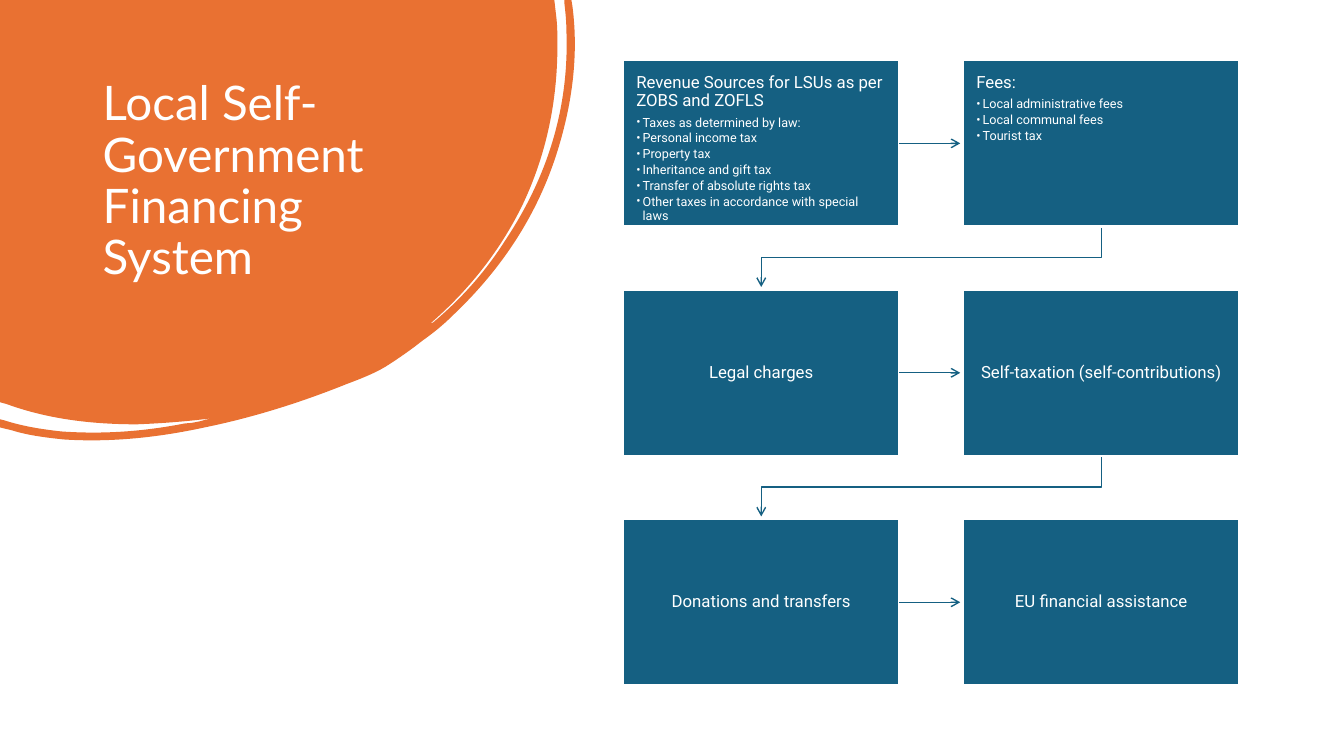
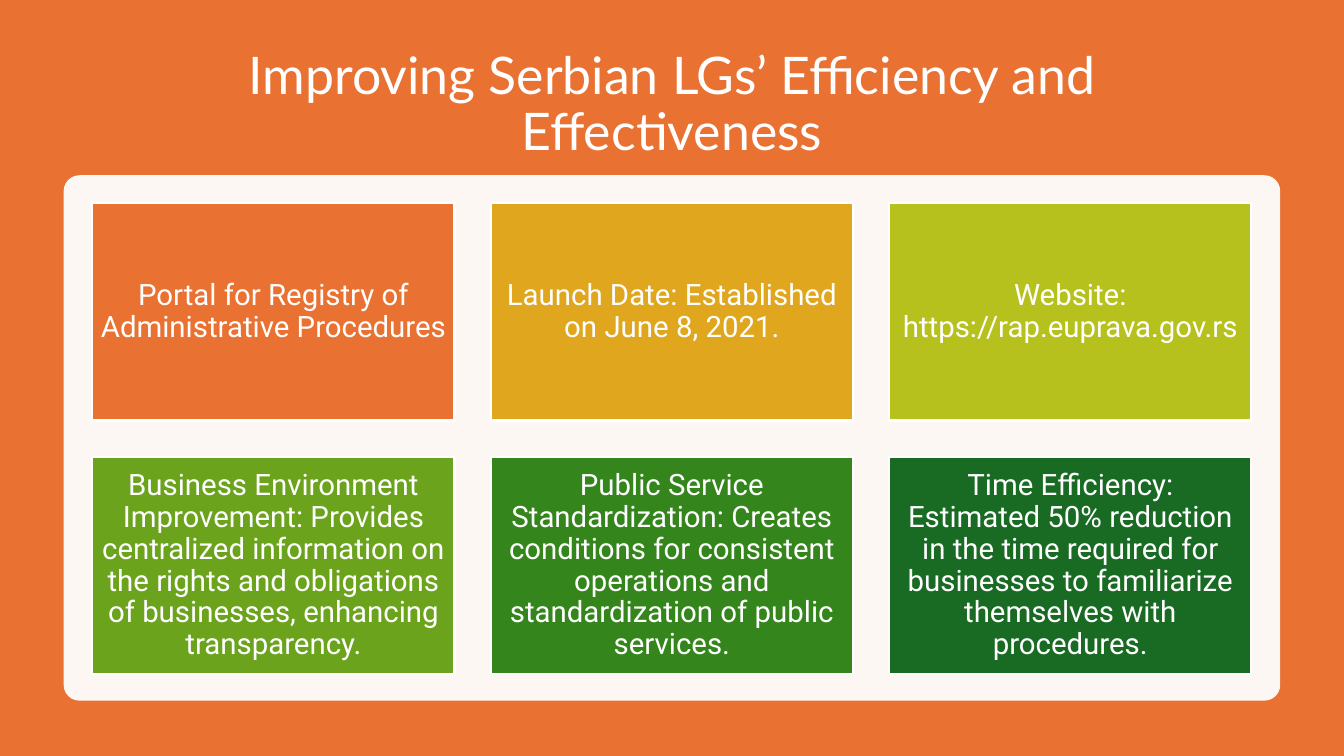
import pptx
import pptx.util
import pptx.dml.color
import pptx.enum.shapes
import pptx.enum.text
import pptx.oxml.ns
import lxml.etree

Pt = pptx.util.Pt
KIND = pptx.enum.shapes.MSO_SHAPE
LINK = pptx.enum.shapes.MSO_CONNECTOR
ALIGN = pptx.enum.text.PP_ALIGN
ANCHOR = pptx.enum.text.MSO_ANCHOR

HEX = {
    "white": "FFFFFF", "orange": "E97132", "blue": "156082",
    "gold": "E0A61D", "lime": "B7C11E", "leaf": "6BA31D",
    "green": "34861C", "forest": "196B24",
}
HEAD, BODY = "Lato", "Roboto"
GAP = 2  # space between an arrow's tip and the box it meets

# Outline of the orange blob: pairs are corners, sixes are cubic curves
BLOB = [
    (0, 0), (396, 0), (397.4, 12.2),
    (398.2, 18.7, 398.2, 25.9, 398.2, 32.4),
    (398.2, 72.7, 390.2, 110.9, 373, 146.9),
    (357.1, 179.3, 334.8, 207.4, 307.4, 231.1),
    (308.9, 231.1, 310.3, 229.7, 311, 229),
    (330.5, 212.4, 347, 193.7, 360.7, 172.1),
    (391, 126.7, 406.8, 77, 404.6, 21.6),
    (404.6, 15.1, 403.9, 8.6, 403.2, 2.2),
    (403.2, 0), (408.2, 0), (409, 5),
    (413.3, 38.9, 409, 73.4, 398.2, 108),
    (383.8, 154.1, 357.8, 193, 322.6, 226.1),
    (316.1, 232.6, 308.9, 238.3, 301.7, 243.4),
    (294.5, 249.1, 287.3, 254.2, 278.6, 259.9),
    (270, 265.7, 259.2, 270, 247.7, 274.3),
    (215.3, 287.3, 181.4, 298.1, 146.2, 305.3),
    (113, 312.5, 79.2, 316.1, 45.4, 313.9),
    (32.4, 312.5, 20.2, 311, 8.6, 307.4),
    (0, 305.3), (0, 299.5), (2.9, 300.2),
    (16.6, 304.6, 30.2, 306.7, 43.9, 308.2),
    (74.2, 310.3, 103, 308.2, 132.5, 302.4),
    (136.1, 302.4, 139, 301.7, 142.6, 301),
    (145.4, 300.2, 148.3, 299.5, 151.2, 298.8),
    (133.9, 301, 115.9, 302.4, 97.9, 303.1),
    (66.2, 303.1, 34.6, 299.5, 5, 288.7),
    (0, 287.3),
]

SOURCES = [
    ("Revenue Sources for LSUs as per ZOBS and ZOFLS", [
        "Taxes as determined by law:", "Personal income tax", "Property tax",
        "Inheritance and gift tax", "Transfer of absolute rights tax",
        "Other taxes in accordance with special laws"]),
    ("Fees:", ["Local administrative fees", "Local communal fees",
               "Tourist tax"]),
    ("Legal charges", []),
    ("Self-taxation (self-contributions)", []),
    ("Donations and transfers", []),
    ("EU financial assistance", []),
]

CARDS = [
    ("orange", "Portal for Registry of Administrative Procedures"),
    ("gold", "Launch Date: Established on June 8, 2021."),
    ("lime", "Website: https://rap.euprava.gov.rs"),
    ("leaf", "Business Environment Improvement: Provides centralized "
             "information on the rights and obligations of businesses, "
             "enhancing transparency."),
    ("green", "Public Service Standardization: Creates conditions for "
              "consistent operations and standardization of public services."),
    ("forest", "Time Efficiency: Estimated 50% reduction in the time required "
               "for businesses to familiarize themselves with procedures."),
]


# Shared helpers
def style(obj, form):
    for key, val in form.items():
        setattr(obj, key, val)


def color(name):
    return pptx.dml.color.RGBColor.from_string(HEX[name])


def paint(fill, name):
    fill.solid()
    fill.fore_color.rgb = color(name)


def sub(node, tag, **vals):
    return lxml.etree.SubElement(node, pptx.oxml.ns.qn(tag), vals)


def write(para, text, font, size, align, after=0):
    para.text = text
    style(para, {"alignment": align, "line_spacing": 0.9,
                 "space_before": Pt(0), "space_after": Pt(after)})
    style(para.font, {"name": font, "size": Pt(size)})
    para.font.color.rgb = color("white")


def bullet(para):
    props = para._p.get_or_add_pPr()
    style(para, {"level": 1})
    for key, val in {"marL": 4.5, "indent": -4.5}.items():
        props.set(key, str(Pt(val)))
    sub(props, "a:buFont", typeface=BODY)
    sub(props, "a:buChar", char="•")


def head(slide, box, text, size, align, anchor):
    title = slide.shapes.title
    style(title, dict(zip(("left", "top", "width", "height"), map(Pt, box))))
    style(title.text_frame, {
        "word_wrap": True, "vertical_anchor": anchor,
        "auto_size": pptx.enum.text.MSO_AUTO_SIZE.NONE})
    write(title.text_frame.paragraphs[0], text, HEAD, size, align)
    return title


def tile(slide, box, fill, pad, anchor):
    shape = slide.shapes.add_shape(KIND.RECTANGLE, *map(Pt, box))
    shape.shadow.inherit = False
    paint(shape.fill, fill)
    paint(shape.line.fill, "white")
    shape.line.width = Pt(1.5)
    side, edge = map(Pt, pad)
    style(shape.text_frame, {
        "word_wrap": True, "vertical_anchor": anchor,
        "margin_left": side, "margin_right": side,
        "margin_top": edge, "margin_bottom": edge})
    return shape


def cells(box, step, cols, count):
    """Boxes of a grid, row by row, from its first box and its pitch."""
    left, top, wide, high = box
    for num in range(count):
        row, col = divmod(num, cols)
        yield left + col * step[0], top + row * step[1], wide, high


# Orange blob
def blob(slide):
    spots = [(Pt(part[num]), Pt(part[num + 1]))
             for part in BLOB for num in range(0, len(part), 2)]
    pen = slide.shapes.build_freeform(*spots[0])
    pen.add_line_segments(spots[1:], close=True)
    shape = pen.convert_to_shape()
    shape.shadow.inherit = False
    paint(shape.fill, "orange")
    shape.line.fill.background()
    # Join the three points of each six into one curve
    legs = iter(list(shape.element.iter(pptx.oxml.ns.qn("a:lnTo"))))
    for part in BLOB[1:]:
        leg = next(legs)
        if len(part) == 6:
            leg.addprevious(curve := lxml.etree.Element(
                pptx.oxml.ns.qn("a:cubicBezTo")))
            for step in (leg, next(legs), next(legs)):
                curve.append(step[0])
                step.getparent().remove(step)
    return shape


# Arrows between the boxes
def arrow(slide, kind, *ends):
    link = slide.shapes.add_connector(kind, *ends)
    paint(link.line.fill, "blue")
    link.line.width = Pt(1)
    sub(link.line._get_or_add_ln(), "a:tailEnd", type="arrow")
    sub(link.element.spPr, "a:effectLst")
    return link


def across(slide, one, two):
    x, y = one.left + one.width, one.top + one.height // 2
    link = arrow(slide, LINK.STRAIGHT, x, y, two.left - Pt(GAP), y)
    link.begin_connect(one, 3)


def down(slide, one, two):
    x1, y1 = one.left + one.width // 2, one.top + one.height + Pt(GAP / 2)
    x2, y2 = two.left + two.width // 2, two.top - Pt(GAP)
    # A quarter turn makes the elbow leave downwards
    midx, midy = (x1 + x2) // 2, (y1 + y2) // 2
    dx, dy = (x1 - x2) // 2, (y2 - y1) // 2
    link = arrow(slide, LINK.ELBOW, midx - dy, midy - dx, midx + dy, midy + dx)
    link.element.spPr.find(pptx.oxml.ns.qn("a:xfrm")).set("rot", "5400000")


# Flow of revenue sources
def flow(slide, box, step):
    tiles = []
    for place, (text, items) in zip(cells(box, step, 2, len(SOURCES)), SOURCES):
        anchor = ANCHOR.TOP if items else ANCHOR.MIDDLE
        align = ALIGN.LEFT if items else ALIGN.CENTER
        shape = tile(slide, place, "blue", (9.5, 10), anchor)
        frame = shape.text_frame
        write(frame.paragraphs[0], text, BODY, 12, align, 4 if items else 0)
        for item in items:
            para = frame.add_paragraph()
            write(para, item, BODY, 9, align, 1.6)
            bullet(para)
        tiles.append(shape)
    for num, (one, two) in enumerate(zip(tiles, tiles[1:])):
        (down if num % 2 else across)(slide, one, two)


# Panel of cards
def panel(slide, box):
    left, top, wide, high = box
    back = slide.shapes.add_shape(KIND.ROUNDED_RECTANGLE, *map(Pt, box))
    back.adjustments[0] = 0.03
    back.shadow.inherit = False
    paint(back.fill, "white")
    tint = back.element.spPr.find(".//" + pptx.oxml.ns.qn("a:srgbClr"))
    sub(tint, "a:alpha", val="95000")
    back.line.fill.background()
    first = (left + 20.5, top + 19.7, 258.7, 155.5)
    for place, (fill, text) in zip(cells(first, (284.6, 181.4), 3, len(CARDS)),
                                   CARDS):
        card = tile(slide, place, fill, (6, 6.5), ANCHOR.MIDDLE)
        write(card.text_frame.paragraphs[0], text, BODY, 21, ALIGN.CENTER)


# Slides
def finance(slide):
    title = head(slide, (66.2, 53.3, 253.4, 160),
                 "Local Self-Government Financing System", 34,
                 ALIGN.LEFT, ANCHOR.TOP)
    title.element.addprevious(blob(slide).element)
    flow(slide, (445, 43.1, 197.5, 118.6), (242.9, 163.9))


def reform(slide):
    paint(slide.background.fill, "orange")
    head(slide, (66, 36, 828, 79.2),
         "Improving Serbian LGs’ Efficiency and Effectiveness", 37,
         ALIGN.CENTER, ANCHOR.MIDDLE)
    panel(slide, (45.5, 125.2, 869, 375.3))


def main():
    deck = pptx.Presentation()
    style(deck, {"slide_width": Pt(960), "slide_height": Pt(540)})
    for build in (finance, reform):
        build(deck.slides.add_slide(deck.slide_layouts[5]))
    deck.save("out.pptx")


if __name__ == "__main__":
    main()
